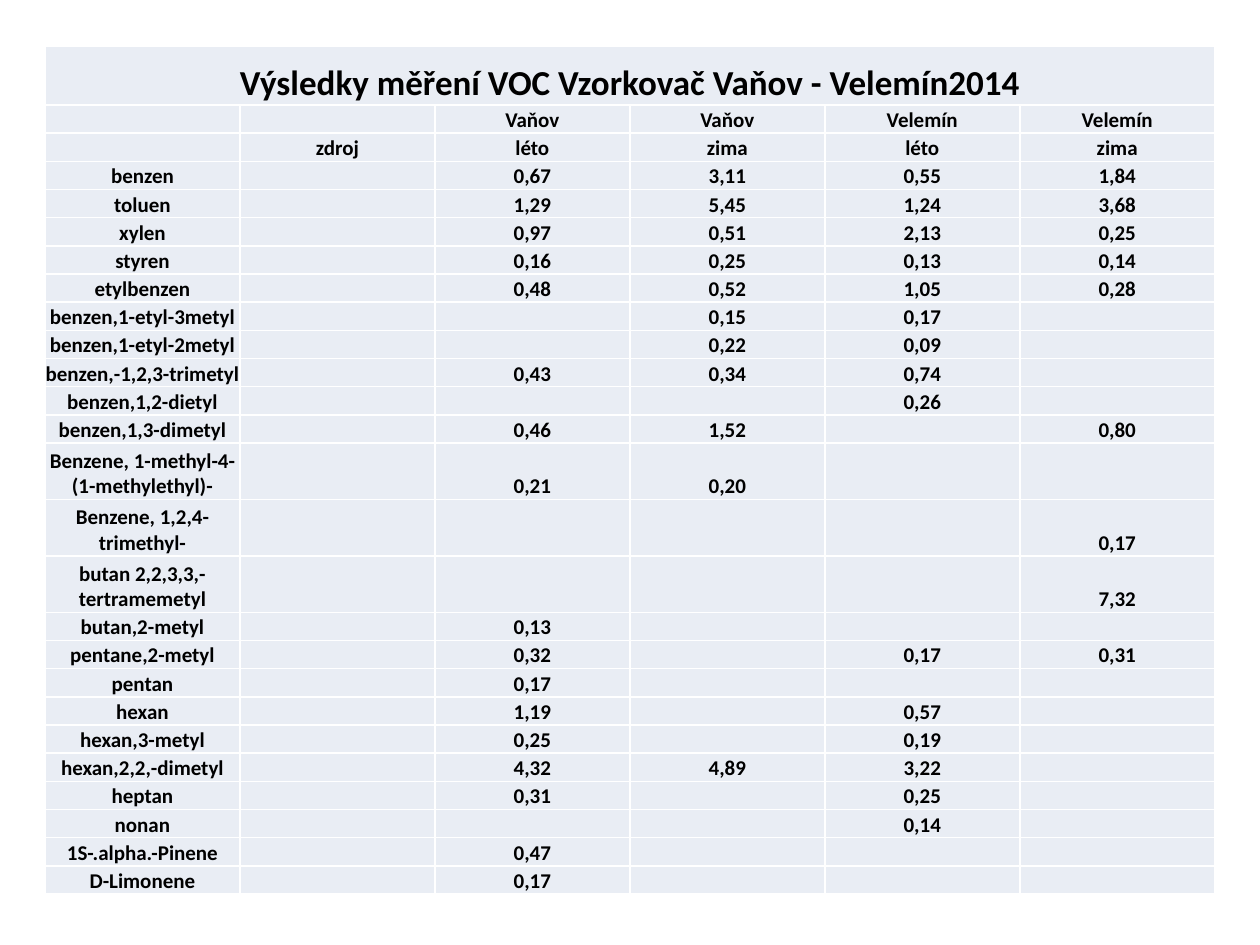
from dataclasses import dataclass

from lxml.etree import SubElement
from pptx import Presentation
from pptx.dml.color import RGBColor as RGB
from pptx.enum.text import MSO_ANCHOR as Anchor, PP_ALIGN as Align
from pptx.oxml.ns import qn
from pptx.util import Emu, Pt


@dataclass(frozen=True)
class Theme:
    font: str = "Calibri"
    text: str = "000000"
    cell: str = "E9EDF4"
    border: str = "FFFFFF"
    border_width: int = 1
    title_size: int = 20
    body_size: int = 12


THEME = Theme()
PX = 914400 / 126

TITLE = "Výsledky měření VOC Vzorkovač Vaňov - Velemín2014"
TITLE_HEIGHT = 59
TWO_LINE_LABELS = {
    "Benzene, 1-methyl-4-(1-methylethyl)-",
    "Benzene, 1,2,4-trimethyl-",
    "butan 2,2,3,3,-tertramemetyl",
}
HEADER = [
    ("", "", "Vaňov", "Vaňov", "Velemín", "Velemín"),
    ("", "zdroj", "léto", "zima", "léto", "zima"),
]
RESULTS = [
    ("benzen", "0,67", "3,11", "0,55", "1,84"),
    ("toluen", "1,29", "5,45", "1,24", "3,68"),
    ("xylen", "0,97", "0,51", "2,13", "0,25"),
    ("styren", "0,16", "0,25", "0,13", "0,14"),
    ("etylbenzen", "0,48", "0,52", "1,05", "0,28"),
    ("benzen,1-etyl-3metyl", "", "0,15", "0,17", ""),
    ("benzen,1-etyl-2metyl", "", "0,22", "0,09", ""),
    ("benzen,-1,2,3-trimetyl", "0,43", "0,34", "0,74", ""),
    ("benzen,1,2-dietyl", "", "", "0,26", ""),
    ("benzen,1,3-dimetyl", "0,46", "1,52", "", "0,80"),
    ("Benzene, 1-methyl-4-(1-methylethyl)-", "0,21", "0,20", "", ""),
    ("Benzene, 1,2,4-trimethyl-", "", "", "", "0,17"),
    ("butan 2,2,3,3,-tertramemetyl", "", "", "", "7,32"),
    ("butan,2-metyl", "0,13", "", "", ""),
    ("pentane,2-metyl", "0,32", "", "0,17", "0,31"),
    ("pentan", "0,17", "", "", ""),
    ("hexan", "1,19", "", "0,57", ""),
    ("hexan,3-metyl", "0,25", "", "0,19", ""),
    ("hexan,2,2,-dimetyl", "4,32", "4,89", "3,22", ""),
    ("heptan", "0,31", "", "0,25", ""),
    ("nonan", "", "", "0,14", ""),
    ("1S-.alpha.-Pinene", "0,47", "", "", ""),
    ("D-Limonene", "0,17", "", "", ""),
]


def px(n):
    return Emu(round(n * PX))


def set_borders(cell):
    tc_pr = cell._tc.get_or_add_tcPr()
    for side in ("lnL", "lnR", "lnT", "lnB"):
        ln = SubElement(tc_pr, qn(f"a:{side}"), w=str(Pt(THEME.border_width)))
        fill = SubElement(ln, qn("a:solidFill"))
        SubElement(fill, qn("a:srgbClr"), val=THEME.border)


def style_cell(cell, text, size):
    set_borders(cell)
    cell.fill.solid()
    cell.fill.fore_color.rgb = RGB.from_string(THEME.cell)
    cell.margin_left = cell.margin_right = 0
    cell.margin_top = cell.margin_bottom = 0
    cell.vertical_anchor = Anchor.BOTTOM
    p = cell.text_frame.paragraphs[0]
    p.alignment = Align.CENTER
    if not text:
        SubElement(p._p, qn("a:endParaRPr"), sz=str(size * 100))
        return
    p.text = text
    font = p.runs[0].font
    font.name = THEME.font
    font.size = Pt(size)
    font.bold = True
    font.color.rgb = RGB.from_string(THEME.text)


def add_results_table(s, left, top, width, height):
    body = HEADER + [(label, "", *values) for label, *values in RESULTS]
    columns = len(HEADER[0])
    rows = [(TITLE,) + ("",) * (columns - 1)] + body
    table = s.shapes.add_table(
        len(rows), columns, px(left), px(top), px(width), px(height)
    ).table
    table.first_row = table.horz_banding = False

    lines = [2 if row[0] in TWO_LINE_LABELS else 1 for row in body]
    line_height = (height - TITLE_HEIGHT) / sum(lines)
    heights = [TITLE_HEIGHT] + [n * line_height for n in lines]
    for row, row_height in zip(table.rows, heights):
        row.height = px(row_height)
    for column in table.columns:
        column.width = px(width / columns)

    for i, row in enumerate(rows):
        size = THEME.body_size if i else THEME.title_size
        for j, text in enumerate(row):
            style_cell(table.cell(i, j), text, size)
    table.cell(0, 0).merge(table.cell(0, columns - 1))


def main():
    prs = Presentation()
    prs.slide_width, prs.slide_height = px(1260), px(945)
    s = prs.slides.add_slide(prs.slide_layouts[6])
    add_results_table(s, 45, 46, 1170, 849)
    prs.save("out.pptx")


if __name__ == "__main__":
    main()
